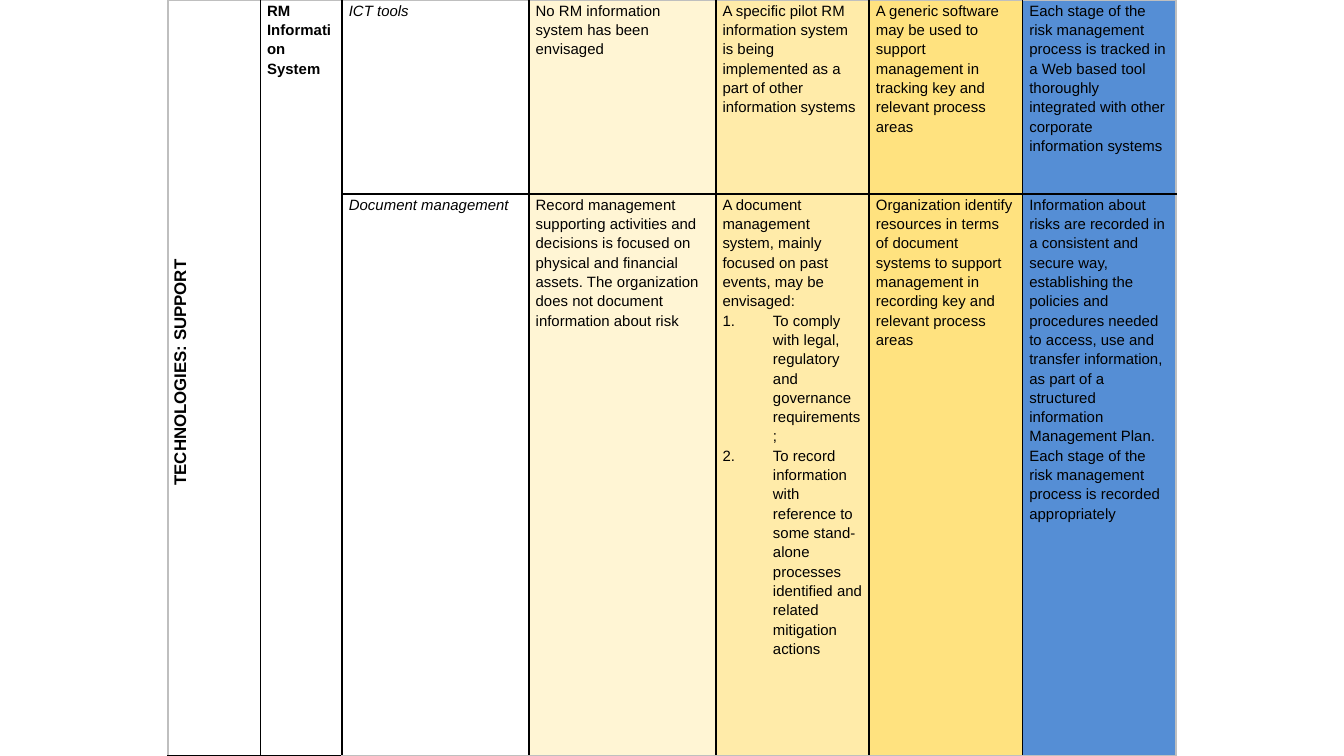
from dataclasses import dataclass
from typing import Optional

from lxml.etree import SubElement
from pptx import Presentation
from pptx.dml.color import RGBColor
from pptx.enum.text import MSO_ANCHOR, PP_ALIGN
from pptx.oxml.ns import qn
from pptx.table import _Cell
from pptx.util import Pt

BLACK = RGBColor(0x00, 0x00, 0x00)
FRAME_GRAY = RGBColor(0xBF, 0xBF, 0xBF)
LEVEL_FILLS = (
    RGBColor(0xFF, 0xF5, 0xD4),
    RGBColor(0xFF, 0xEB, 0xA9),
    RGBColor(0xFF, 0xE2, 0x7F),
    RGBColor(0x55, 0x8E, 0xD5),
)
SLIDE_WIDTH, SLIDE_HEIGHT = 720, 405
TABLE_LEFT = 90
COLUMN_WIDTHS = (49.5, 43.8, 100.1, 100.1, 82.2, 82.2, 82.2)
ROW_HEIGHTS = (104, 301)
FIRST_LEVEL_COLUMN = 3
LIST_INDENT = 27


@dataclass(frozen=True)
class Entry:
    text: str
    numbered: tuple[str, ...] = ()
    size: float = 8
    bold: bool = False
    italic: bool = False
    align: PP_ALIGN = PP_ALIGN.LEFT
    fill: Optional[RGBColor] = None
    rotated: bool = False


@dataclass(frozen=True)
class Criterion:
    name: str
    levels: tuple[Entry, ...]


AREA = Entry("TECHNOLOGIES: SUPPORT", size=9, bold=True, align=PP_ALIGN.CENTER, rotated=True)
TOPIC = Entry("RM Information System", bold=True, align=PP_ALIGN.JUSTIFY)
CRITERIA = (
    Criterion("ICT tools", (
        Entry("No RM information system has been envisaged"),
        Entry("A specific pilot RM information system is being implemented "
              "as a part of other information systems"),
        Entry("A generic software may be used to support management in "
              "tracking key and relevant process areas"),
        Entry("Each stage of the risk management process is tracked in a Web based "
              "tool thoroughly integrated with other corporate information systems"),
    )),
    Criterion("Document management", (
        Entry("Record management supporting activities and decisions is focused on "
              "physical and financial assets. The organization does not document "
              "information about risk"),
        Entry("A document management system, mainly focused on past events, may be envisaged:",
              numbered=(
                  "To comply with legal, regulatory and governance requirements;",
                  "To record information with reference to some stand-alone processes "
                  "identified and related mitigation actions",
              )),
        Entry("Organization identify resources in terms of document systems to support "
              "management in recording key and relevant process areas"),
        Entry("Information about risks are recorded in a consistent and secure way, "
              "establishing the policies and procedures needed to access, use and "
              "transfer information, as part of a structured information Management "
              "Plan. Each stage of the risk management process is recorded appropriately"),
    )),
)


def set_borders(cell: _Cell, row: int, column: int) -> None:
    """Draw black inner rules and a gray frame around the table."""
    on_frame = {
        "a:lnL": column == 0,
        "a:lnR": column == len(COLUMN_WIDTHS) - 1,
        "a:lnT": row == 0,
        "a:lnB": row == len(ROW_HEIGHTS) - 1,
    }
    properties = cell._tc.get_or_add_tcPr()
    for side, framed in on_frame.items():
        line = SubElement(properties, qn(side), w=str(Pt(1)))
        solid = SubElement(line, qn("a:solidFill"))
        SubElement(solid, qn("a:srgbClr"), val=str(FRAME_GRAY if framed else BLACK))


def set_fill(cell: _Cell, color: Optional[RGBColor]) -> None:
    if color is None:
        cell.fill.background()
    else:
        cell.fill.solid()
        cell.fill.fore_color.rgb = color


def write_entry(cell: _Cell, entry: Entry) -> None:
    cell.margin_left = cell.margin_right = Pt(3.6)
    cell.margin_top = cell.margin_bottom = Pt(0)
    frame = cell.text_frame
    frame.text = "\n".join((entry.text, *entry.numbered))
    for position, paragraph in enumerate(frame.paragraphs):
        paragraph.alignment = entry.align
        paragraph.line_spacing = 1.15
        if position > 0:
            properties = paragraph._p.get_or_add_pPr()
            properties.set("marL", str(Pt(LIST_INDENT)))
            properties.set("indent", str(-Pt(LIST_INDENT)))
            SubElement(properties, qn("a:buFont"), typeface="+mj-lt")
            SubElement(properties, qn("a:buAutoNum"), type="arabicPeriod")
        for run in paragraph.runs:
            run.font.name = "Arial"
            run.font.size = Pt(entry.size)
            run.font.bold = entry.bold
            run.font.italic = entry.italic
            run.font.color.rgb = BLACK
    if entry.rotated:
        cell.vertical_anchor = MSO_ANCHOR.MIDDLE
        cell._tc.get_or_add_tcPr().set("vert", "vert270")
        frame.paragraphs[0]._p.get_or_add_pPr().set("marL", str(Pt(5.8)))


def main() -> None:
    presentation = Presentation()
    presentation.slide_width = Pt(SLIDE_WIDTH)
    presentation.slide_height = Pt(SLIDE_HEIGHT)
    slide = presentation.slides.add_slide(presentation.slide_layouts[6])

    matrix = slide.shapes.add_table(
        len(ROW_HEIGHTS), len(COLUMN_WIDTHS), Pt(TABLE_LEFT), Pt(0),
        Pt(sum(COLUMN_WIDTHS)), Pt(sum(ROW_HEIGHTS)),
    ).table
    matrix.first_row = False
    matrix.horz_banding = False
    for column, width in zip(matrix.columns, COLUMN_WIDTHS):
        column.width = Pt(width)
    for row, height in zip(matrix.rows, ROW_HEIGHTS):
        row.height = Pt(height)

    for row in range(len(ROW_HEIGHTS)):
        for column in range(len(COLUMN_WIDTHS)):
            cell = matrix.cell(row, column)
            level = column - FIRST_LEVEL_COLUMN
            set_borders(cell, row, column)
            set_fill(cell, LEVEL_FILLS[level] if level >= 0 else None)

    for column, heading in enumerate((AREA, TOPIC)):
        matrix.cell(0, column).merge(matrix.cell(len(ROW_HEIGHTS) - 1, column))
        write_entry(matrix.cell(0, column), heading)
    for row, criterion in enumerate(CRITERIA):
        name = Entry(criterion.name, italic=True, align=PP_ALIGN.JUSTIFY)
        for column, entry in enumerate((name, *criterion.levels), start=FIRST_LEVEL_COLUMN - 1):
            write_entry(matrix.cell(row, column), entry)

    presentation.save("out.pptx")


if __name__ == "__main__":
    main()
